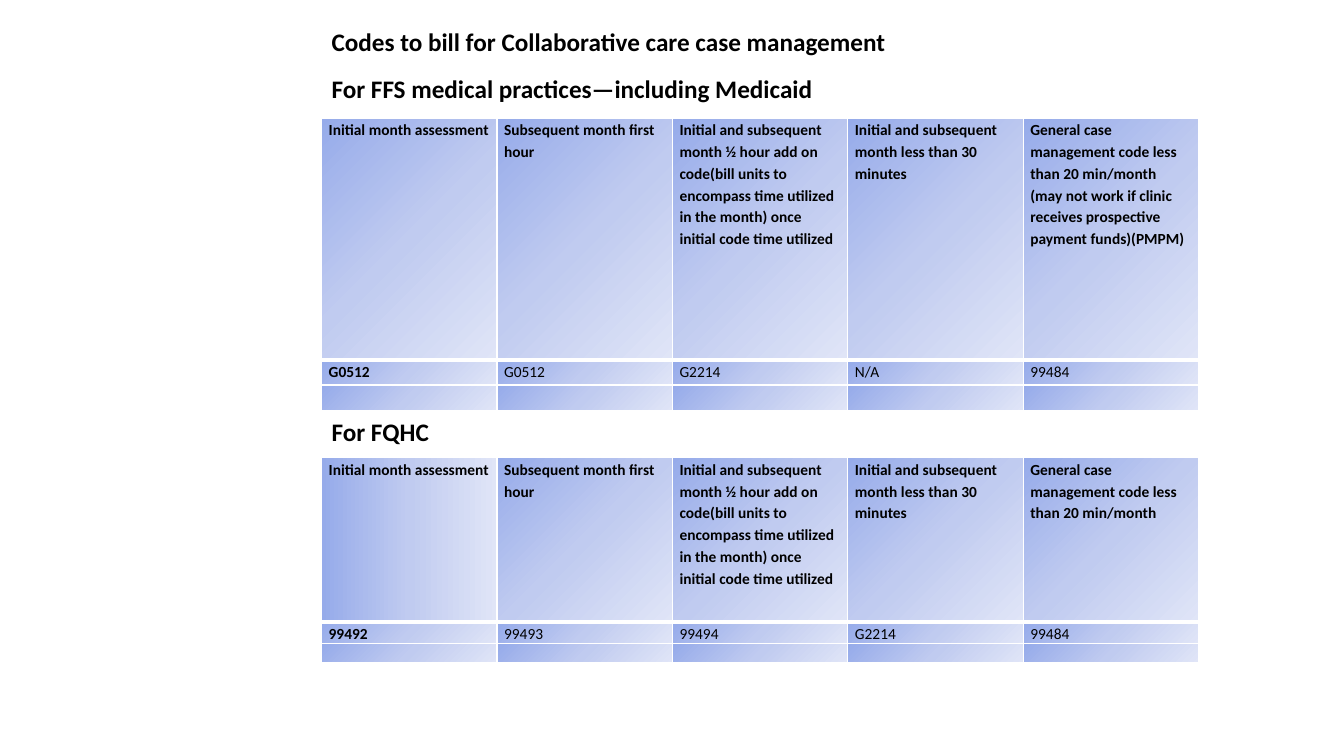
from dataclasses import dataclass

from lxml import etree
from pptx import Presentation
from pptx.dml.color import RGBColor
from pptx.oxml.ns import qn
from pptx.util import Emu, Pt

EMU_PER_PX = 9144
EMU_PER_PT = 12700
BLANK_LAYOUT = 6


@dataclass(frozen=True)
class Theme:
    font: str = "Calibri"
    text: str = "000000"
    border: str = "FFFFFF"
    gradient: tuple = ((0, "96ABEA"), (50, "C0CBF0"), (100, "E0E5F7"))
    heading_size: int = 18
    cell_size: int = 11
    heading_gap: float = 12.2
    line_spacing: float = 1.15
    thin: int = 1
    thick: int = 3


THEME = Theme()

LEFT = 319
COLUMN_WIDTH = 174
CELL_MARGIN = 7
DIAGONAL = 45

COMMON_HEADERS = [
    "Initial month assessment",
    "Subsequent month first hour",
    "Initial and subsequent month ½ hour add on code(bill units to "
    "encompass time utilized in the month) once initial code time utilized",
    "Initial and subsequent month less than 30 minutes",
]
GENERAL_CODE = "General case management code less than 20 min/month"
FUNDS_NOTE = "(may not work if clinic receives prospective payment funds)(PMPM)"

FFS_HEADERS = COMMON_HEADERS + [f"{GENERAL_CODE}\n{FUNDS_NOTE}"]
FFS_CODES = ["G0512", "G0512", "G2214", "N/A", "99484"]
FQHC_HEADERS = COMMON_HEADERS + [GENERAL_CODE]
FQHC_CODES = ["99492", "99493", "99494", "G2214", "99484"]


def px(length):
    return Emu(length * EMU_PER_PX)


def style_run(run, size, bold):
    run.font.name = THEME.font
    run.font.size = Pt(size)
    run.font.bold = bold
    run.font.color.rgb = RGBColor.from_string(THEME.text)


def add_headings(slide, top, width, height, lines):
    frame = slide.shapes.add_textbox(px(LEFT), px(top), px(width), px(height)).text_frame
    frame.word_wrap = True
    frame.text = "\n".join(lines)
    for index, paragraph in enumerate(frame.paragraphs):
        if index:
            paragraph.space_before = Pt(THEME.heading_gap)
        style_run(paragraph.runs[0], THEME.heading_size, True)


def add_color(parent, color):
    etree.SubElement(parent, qn("a:srgbClr"), val=color)


def add_border(properties, side, points):
    line = etree.SubElement(properties, qn(f"a:ln{side}"), w=str(points * EMU_PER_PT))
    add_color(etree.SubElement(line, qn("a:solidFill")), THEME.border)


def add_gradient(properties, angle):
    gradient = etree.SubElement(properties, qn("a:gradFill"), rotWithShape="1")
    stops = etree.SubElement(gradient, qn("a:gsLst"))
    for percent, color in THEME.gradient:
        add_color(etree.SubElement(stops, qn("a:gs"), pos=str(percent * 1000)), color)
    etree.SubElement(gradient, qn("a:lin"), ang=str(angle * 60000), scaled="0")


def fill_cell(cell, text, bold):
    cell.margin_left = cell.margin_right = px(CELL_MARGIN)
    cell.margin_top = cell.margin_bottom = 0
    cell.text_frame.text = text
    for paragraph in cell.text_frame.paragraphs:
        paragraph.line_spacing = THEME.line_spacing
        for run in paragraph.runs:
            style_run(run, THEME.cell_size, bold)
        if not paragraph.runs:
            etree.SubElement(paragraph._p, qn("a:endParaRPr"), sz=str(THEME.cell_size * 100))


def decorate_cell(cell, row, angle):
    """Border and shade a cell, with a thick rule below the header row."""
    properties = cell._tc.get_or_add_tcPr()
    borders = {"L": THEME.thin, "R": THEME.thin,
               "T": THEME.thick if row == 1 else THEME.thin,
               "B": THEME.thick if row == 0 else THEME.thin}
    for side, points in borders.items():
        add_border(properties, side, points)
    add_gradient(properties, angle)


def add_code_table(slide, top, row_heights, headers, codes, first_angle=DIAGONAL):
    """Add a header row, a row of billing codes and an empty row."""
    rows = [headers, codes, [""] * len(headers)]
    table = slide.shapes.add_table(
        len(rows), len(headers), px(LEFT), px(top),
        px(COLUMN_WIDTH * len(headers)), px(sum(row_heights))).table
    table.horz_banding = False
    for column in table.columns:
        column.width = px(COLUMN_WIDTH)
    for row, (height, texts) in enumerate(zip(row_heights, rows)):
        table.rows[row].height = px(height)
        for column, text in enumerate(texts):
            cell = table.cell(row, column)
            fill_cell(cell, text, bold=row == 0 or column == 0)
            decorate_cell(cell, row, first_angle if row == column == 0 else DIAGONAL)


def main():
    presentation = Presentation()
    presentation.slide_width = px(1333)
    presentation.slide_height = px(750)
    slide = presentation.slides.add_slide(presentation.slide_layouts[BLANK_LAYOUT])
    add_code_table(slide, 454, [163, 17, 17], FQHC_HEADERS, FQHC_CODES, first_angle=0)
    add_code_table(slide, 117, [240, 25, 25], FFS_HEADERS, FFS_CODES)
    add_headings(slide, 21, 580, 118, [
        "Codes to bill for Collaborative care case management",
        "For FFS medical practices—including Medicaid",
    ])
    add_headings(slide, 408, 871, 40, ["For FQHC"])
    presentation.save("out.pptx")


if __name__ == "__main__":
    main()
